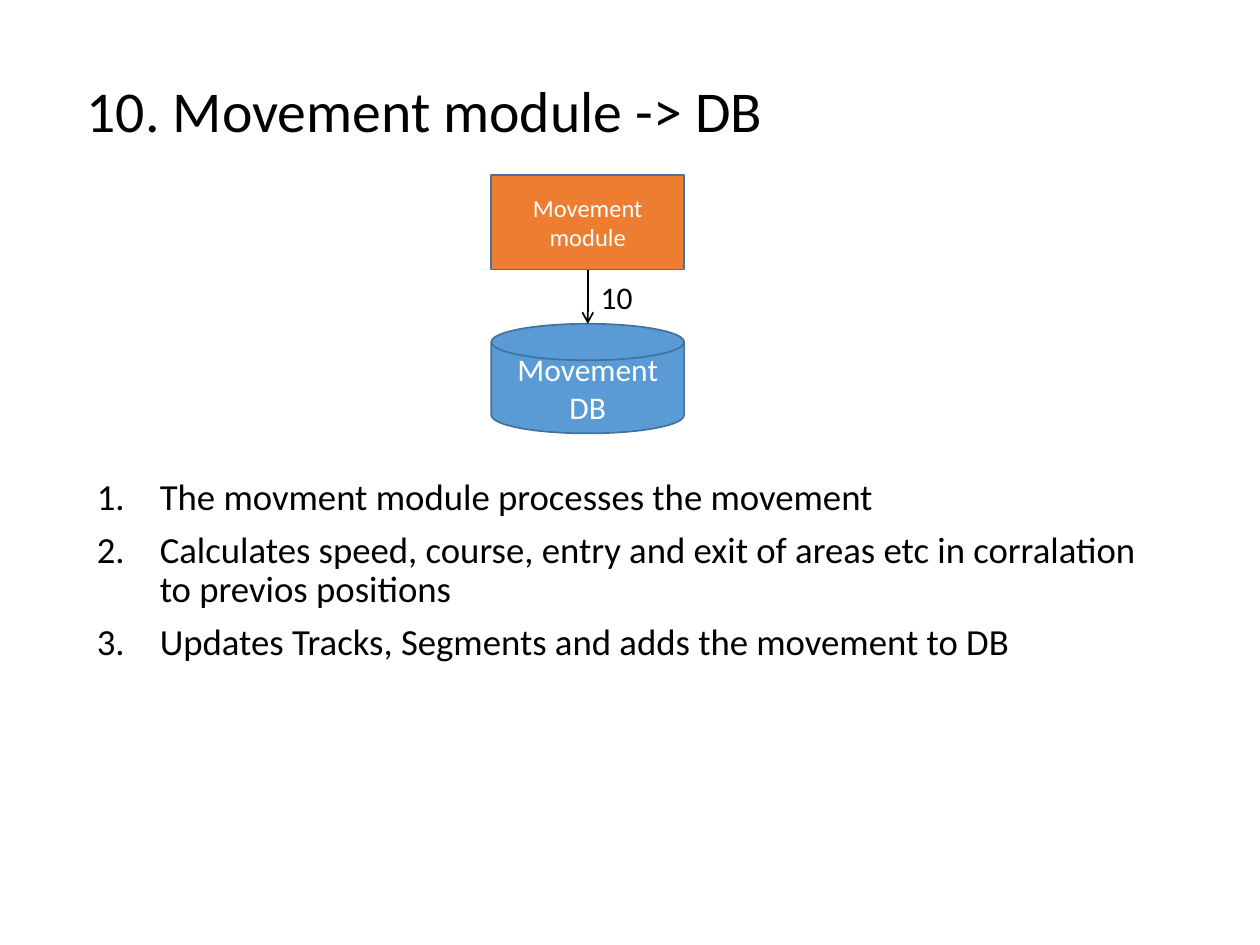
from dataclasses import dataclass
from pptx import Presentation
from pptx.dml.color import RGBColor as RGB
from pptx.enum.shapes import MSO_CONNECTOR as Conn, MSO_SHAPE as Form
from pptx.enum.text import MSO_ANCHOR as Anchor, PP_ALIGN as Align
from pptx.oxml.ns import qn
from pptx.util import Inches, Pt
from lxml.etree import SubElement as Sub


@dataclass(frozen=True)
class Theme:
    """Colours, font and type sizes of the slide."""
    font: str = "Calibri"
    ink: RGB = RGB(0, 0, 0)
    white: RGB = RGB(255, 255, 255)
    orange: RGB = RGB(0xED, 0x7D, 0x31)
    blue: RGB = RGB(0x5B, 0x9B, 0xD5)
    edge: RGB = RGB(0x43, 0x73, 0x9E)
    title: float = 33
    body: float = 21
    label: float = 18
    small: float = 14


LOOK = Theme()


def write(para, text, size, color):
    """Add one styled run to a paragraph."""
    run = para.add_run()
    run.text = text
    run.font.name = LOOK.font
    run.font.size = Pt(size)
    run.font.color.rgb = color


def add_text(slide, box, wrap=True):
    """Add a text box and return its frame."""
    frame = slide.shapes.add_textbox(*map(Inches, box)).text_frame
    frame.word_wrap = wrap
    return frame


def add_title(slide, box, text):
    """Place the slide title, centred vertically in its box."""
    frame = add_text(slide, box)
    frame.vertical_anchor = Anchor.MIDDLE
    para = frame.paragraphs[0]
    para.line_spacing = 0.9
    write(para, text, LOOK.title, LOOK.ink)


def add_steps(slide, box, steps):
    """Place a numbered list of steps."""
    frame = add_text(slide, box)
    for i, step in enumerate(steps):
        para = frame.add_paragraph() if i else frame.paragraphs[0]
        para.line_spacing = 0.9
        para.space_before = Pt(7.5)
        props = para._p.get_or_add_pPr()
        props.set("marL", str(Inches(0.5)))
        props.set("indent", str(Inches(-0.5)))
        Sub(props, qn("a:buFont"), typeface="+mj-lt")
        Sub(props, qn("a:buAutoNum"), type="arabicPeriod")
        write(para, step, LOOK.body, LOOK.ink)


def add_node(slide, form, box, text, size, fill):
    """Place a filled, outlined shape with a centred label."""
    node = slide.shapes.add_shape(form, *map(Inches, box))
    node.shadow.inherit = False
    node.fill.solid()
    node.fill.fore_color.rgb = fill
    node.line.color.rgb = LOOK.edge
    node.line.width = Pt(1)
    frame = node.text_frame
    frame.word_wrap = True
    frame.vertical_anchor = Anchor.MIDDLE
    para = frame.paragraphs[0]
    para.alignment = Align.CENTER
    write(para, text, size, LOOK.white)
    return node


def add_arrow(slide, start, end):
    """Run an arrow from the foot of one node to the top of another."""
    mid = start.left + start.width // 2
    arrow = slide.shapes.add_connector(
        Conn.STRAIGHT, mid, start.top + start.height, mid, end.top)
    arrow.begin_connect(start, 2)
    arrow.line.color.rgb = LOOK.ink
    arrow.line.width = Pt(1)
    Sub(arrow.line._get_or_add_ln(), qn("a:tailEnd"), type="arrow")
    Sub(arrow._element.spPr, qn("a:effectLst"))


def add_flow(slide, box):
    """Place the module, its database and the numbered arrow between them."""
    left, top, width, height = box
    head, foot = 0.75, 0.87
    module = add_node(slide, Form.RECTANGLE, (left, top, width, head),
                      "Movement module", LOOK.small, LOOK.orange)
    store = add_node(slide, Form.FLOWCHART_MAGNETIC_DISK,
                     (left, top + height - foot, width, foot),
                     "Movement DB", LOOK.label, LOOK.blue)
    add_arrow(slide, module, store)
    spot = (left + width / 2, top + head + 0.02, 0.46, 0.4)
    para = add_text(slide, spot, wrap=False).paragraphs[0]
    para.alignment = Align.CENTER
    write(para, "10", LOOK.label, LOOK.ink)


def main():
    """Build the slide and save it."""
    deck = Presentation()
    deck.slide_width, deck.slide_height = Inches(10), Inches(7.5)
    slide = deck.slides.add_slide(deck.slide_layouts[6])
    add_title(slide, (0.59, 0.32, 8.62, 1.17), "10. Movement module -> DB")
    add_steps(slide, (0.67, 3.75, 8.74, 3.62), (
        "The movment module processes the movement",
        "Calculates speed, course, entry and exit of areas etc in "
        "corralation to previos positions",
        "Updates Tracks, Segments and adds the movement to DB",
    ))
    add_flow(slide, (3.9, 1.39, 1.53, 2.05))
    deck.save("out.pptx")


if __name__ == "__main__":
    main()
